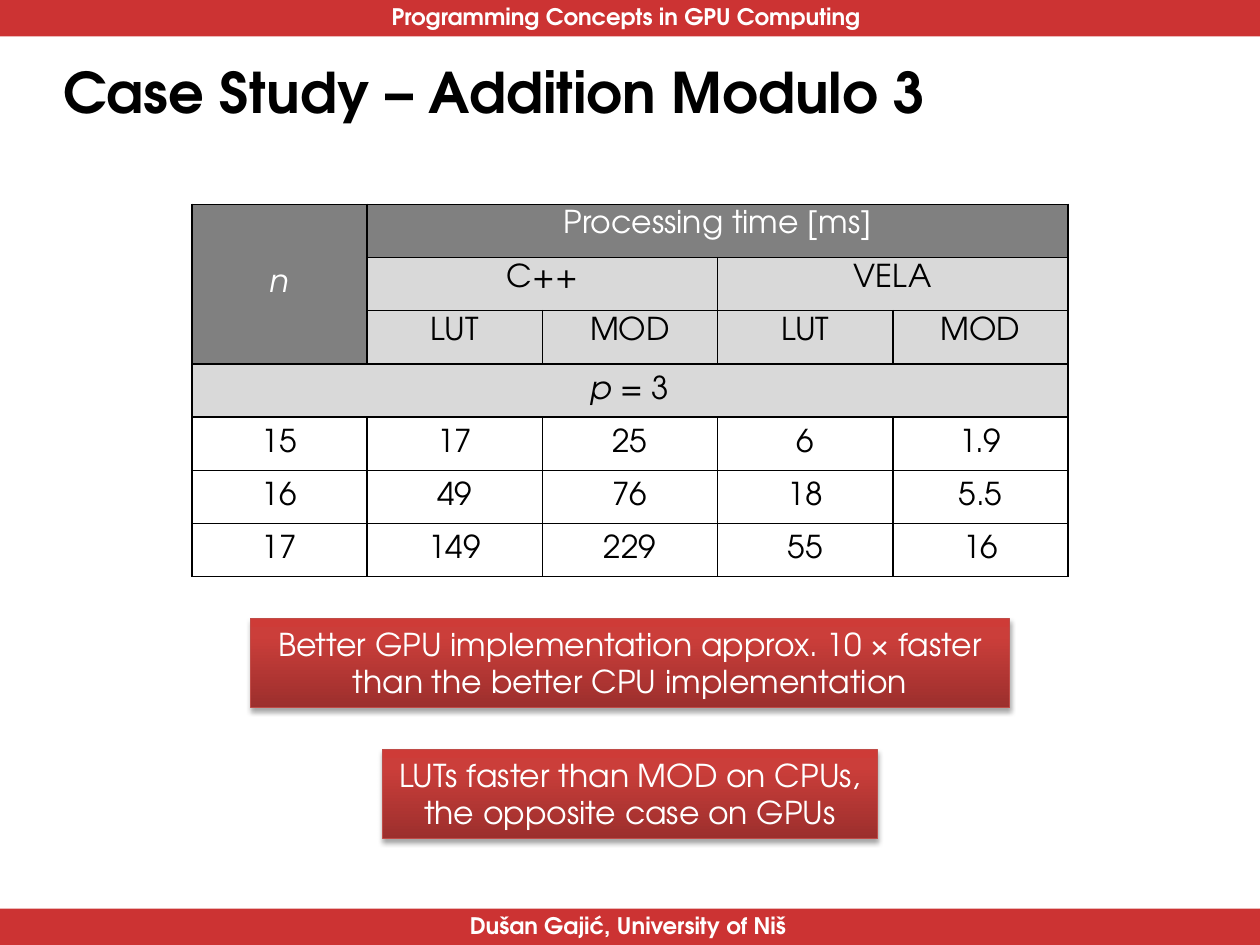
from copy import deepcopy
from lxml.etree import SubElement
from pptx import Presentation
from pptx.dml.color import RGBColor
from pptx.enum.shapes import MSO_SHAPE
from pptx.enum.text import MSO_ANCHOR, MSO_AUTO_SIZE, PP_ALIGN
from pptx.oxml.ns import qn
from pptx.util import Pt

FONT = "TeX Gyre Adventor"
HUES = {
    "band": "C00000", "white": "FFFFFF", "black": "000000",
    "dark": "808080", "light": "D9D9D9", "edge": "BF4C48",
    "low": "9C2F2D", "mid": "CB3E3A", "high": "CE3B37",
}
HEADS = [
    (0, 0, 3, 1, "n", "dark"),
    (0, 1, 1, 4, "Processing time [ms]", "dark"),
    (1, 1, 1, 2, "C++", "light"),
    (1, 3, 1, 2, "VELA", "light"),
    *[(2, col, 1, 1, ("MOD", "LUT")[col % 2], "light") for col in range(1, 5)],
    (3, 0, 1, 5, "p = 3", "light"),
]
TIMES = [
    ("15", "17", "25", "6", "1.9"),
    ("16", "49", "76", "18", "5.5"),
    ("17", "149", "229", "55", "16"),
]


def tint(name):
    return RGBColor.from_string(HUES[name])


def apply(item, **values):
    for name, value in values.items():
        setattr(item, name, value)


def add_run(para, text, hue, size=18, **marks):
    run = para.add_run()
    run.text = text
    apply(run.font, name=FONT, size=Pt(size), **marks)
    run.font.color.rgb = tint(hue)


def add_label(slide, box, text, hue, size):
    frame = slide.shapes.add_textbox(*map(Pt, box)).text_frame
    apply(frame, word_wrap=False, auto_size=MSO_AUTO_SIZE.SHAPE_TO_FIT_TEXT,
          vertical_anchor=MSO_ANCHOR.MIDDLE)
    add_run(frame.paragraphs[0], text, hue, size, bold=True)


def add_band(slide, box, text, left, width):
    band = slide.shapes.add_shape(MSO_SHAPE.RECTANGLE, *map(Pt, box))
    band.shadow.inherit = False
    band.fill.solid()
    band.fill.fore_color.rgb = tint("band")
    color = band.fill._xPr.find(".//" + qn("a:srgbClr"))
    SubElement(color, qn("a:alpha"), val="80000")
    band.line.fill.background()
    add_label(slide, (left, box[1] - 2, width, 23), text, "white", 13)


def add_rules(cell):
    props = cell._tc.get_or_add_tcPr()
    for index, side in enumerate(("lnL", "lnR", "lnT", "lnB")):
        line = SubElement(props, qn("a:" + side), w=str(Pt(1)))
        props.remove(line)
        props.insert(index, line)
        fill = SubElement(line, qn("a:solidFill"))
        SubElement(fill, qn("a:srgbClr"), val=HUES["black"])


def fill_cell(cell, text, back=None, anchor=MSO_ANCHOR.MIDDLE):
    inset = Pt(3.6) if anchor == MSO_ANCHOR.TOP else 0
    apply(cell, vertical_anchor=anchor, margin_top=inset, margin_bottom=0)
    if back:
        cell.fill.solid()
        cell.fill.fore_color.rgb = tint(back)
    para = cell.text_frame.paragraphs[0]
    para.alignment = PP_ALIGN.CENTER
    hue = "white" if back == "dark" else "black"
    slant = text[0] in "np"
    add_run(para, text[:1] if slant else text, hue, italic=slant)
    if slant and text[1:]:
        add_run(para, text[1:], hue, italic=False)


def add_times(slide, box):
    left, top, width, height = box
    table = slide.shapes.add_table(7, 5, *map(Pt, box)).table
    apply(table, first_row=False, horz_banding=False)
    for col in table.columns:
        col.width = Pt(width / 5)
    for row in table.rows:
        row.height = Pt(height / 7)
    for cell in table.iter_cells():
        cell.fill.background()
        add_rules(cell)
    for row, col, down, across, text, back in HEADS:
        cell = table.cell(row, col)
        if down * across > 1:
            cell.merge(table.cell(row + down - 1, col + across - 1))
        anchor = MSO_ANCHOR.TOP if col else MSO_ANCHOR.MIDDLE
        fill_cell(cell, text, back, anchor)
    for row, values in enumerate(TIMES, 4):
        for col, text in enumerate(values):
            fill_cell(table.cell(row, col), text)


def add_shade(shape):
    shape.fill.gradient()
    shape.fill.gradient_angle = 90
    first = shape.fill.gradient_stops[0]._gs
    first.addnext(deepcopy(first))
    stops = zip(shape.fill.gradient_stops, ("low", "mid", "high"), (0, 0.8, 1))
    for stop, hue, place in stops:
        stop.color.rgb = tint(hue)
        stop.position = place


def add_shadow(shape):
    shape.shadow.inherit = False
    effects = shape._element.spPr.find(qn("a:effectLst"))
    shadow = SubElement(effects, qn("a:outerShdw"), blurRad=str(Pt(3.1)),
                        dist=str(Pt(1.8)), dir="5400000", rotWithShape="0")
    color = SubElement(shadow, qn("a:srgbClr"), val=HUES["black"])
    SubElement(color, qn("a:alpha"), val="35000")


def add_note(slide, box, lines):
    note = slide.shapes.add_shape(MSO_SHAPE.RECTANGLE, *map(Pt, box))
    add_shade(note)
    note.line.color.rgb = tint("edge")
    note.line.width = Pt(0.75)
    add_shadow(note)
    frame = note.text_frame
    apply(frame, word_wrap=True, vertical_anchor=MSO_ANCHOR.TOP,
          auto_size=MSO_AUTO_SIZE.SHAPE_TO_FIT_TEXT)
    for index, text in enumerate(lines):
        para = frame.add_paragraph() if index else frame.paragraphs[0]
        para.alignment = PP_ALIGN.CENTER
        add_run(para, text, "white")


def main():
    deck = Presentation()
    apply(deck, slide_width=Pt(720), slide_height=Pt(540))
    slide = deck.slides.add_slide(deck.slide_layouts[6])
    add_band(slide, (0, 519.2, 720, 20.8),
             "Dušan Gajić, University of Niš", 261.4, 197.3)
    add_band(slide, (0, 0, 720, 20.8),
             "Programming Concepts in GPU Computing", 216.7, 285.8)
    add_label(slide, (29, 28.8, 522, 46),
              "Case Study – Addition Modulo 3", "black", 32)
    add_times(slide, (109.6, 116.8, 500.8, 212.8))
    add_note(slide, (143.2, 353.4, 433.6, 51),
             ("Better GPU implementation approx. 10 × faster",
              "than the better CPU implementation"))
    add_note(slide, (218.6, 428.2, 282.8, 51),
             ("LUTs faster than MOD on CPUs,", "the opposite case on GPUs"))
    deck.save("out.pptx")


if __name__ == "__main__":
    main()
